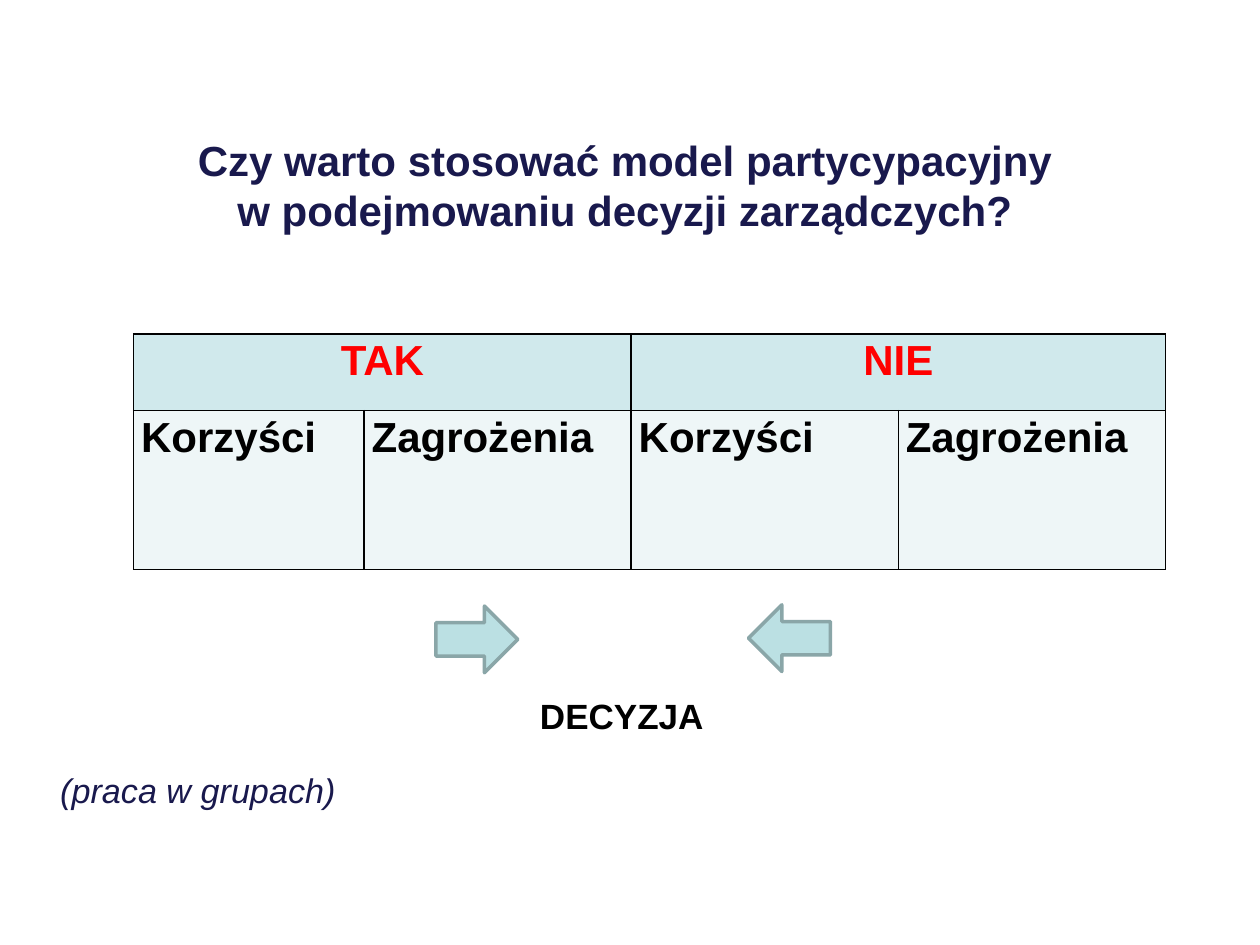
from lxml import etree
from pptx import Presentation, util as u
from pptx.dml.color import RGBColor
from pptx.enum import shapes, text
from pptx.oxml.ns import qn

NAVY = RGBColor(0x19, 0x19, 0x4D)
BLACK = RGBColor(0x00, 0x00, 0x00)
RED = RGBColor(0xFF, 0x00, 0x00)
TEAL = RGBColor(0xBB, 0xE0, 0xE3)
PALE_TEAL = RGBColor(0xE7, 0xF3, 0xF4)
ARROW_LINE = RGBColor(0x8A, 0xA6, 0xA8)


class SlideBuilder:
    """Holds the shared style and the slide being filled."""

    font_name = "Arial"
    cell_opacity = 68
    border_width = 1

    def __init__(self, slide):
        self.slide = slide

    def add_lines(self, paragraph, lines, size, color, bold=False, italic=False,
                  align=text.PP_ALIGN.CENTER):
        paragraph.alignment = align
        for index, line in enumerate(lines):
            if index:
                paragraph.add_line_break()
            run = paragraph.add_run()
            run.text = line
            run.font.name = self.font_name
            run.font.size = u.Pt(size)
            run.font.bold = bold
            run.font.italic = italic
            run.font.color.rgb = color

    def text_box(self, box, lines, size, color, anchor=text.MSO_ANCHOR.MIDDLE, **style):
        shape = self.slide.shapes.add_textbox(*map(u.Inches, box))
        frame = shape.text_frame
        frame.word_wrap = True
        frame.vertical_anchor = anchor
        self.add_lines(frame.paragraphs[0], lines, size, color, **style)

    def arrow(self, left, top, rotation=0):
        shape = self.slide.shapes.add_shape(
            shapes.MSO_SHAPE.RIGHT_ARROW,
            u.Inches(left), u.Inches(top), u.Inches(0.65), u.Inches(0.53))
        shape.rotation = rotation
        shape.shadow.inherit = False
        shape.fill.solid()
        shape.fill.fore_color.rgb = TEAL
        shape.line.color.rgb = ARROW_LINE
        shape.line.width = u.Pt(2)

    def table(self, left, top, widths, heights):
        frame = self.slide.shapes.add_table(
            len(heights), len(widths), u.Inches(left), u.Inches(top),
            u.Inches(sum(widths)), u.Inches(sum(heights)))
        table = frame.table
        for column, width in zip(table.columns, widths):
            column.width = u.Inches(width)
        for row, height in zip(table.rows, heights):
            row.height = u.Inches(height)
        return table

    def cell_style(self, cell, color):
        cell.margin_left = cell.margin_right = u.Inches(0.06)
        cell.margin_top = cell.margin_bottom = u.Inches(0.03)
        properties = cell._tc.get_or_add_tcPr()
        # Borders come before the fill in the cell properties
        for side in ("lnL", "lnR", "lnT", "lnB"):
            line = etree.SubElement(properties, qn(f"a:{side}"),
                                    w=str(u.Pt(self.border_width)))
            solid = etree.SubElement(line, qn("a:solidFill"))
            etree.SubElement(solid, qn("a:srgbClr"), val=str(BLACK))
        cell.fill.solid()
        cell.fill.fore_color.rgb = color
        fill_color = properties.find(qn("a:solidFill")).find(qn("a:srgbClr"))
        etree.SubElement(fill_color, qn("a:alpha"), val=str(self.cell_opacity * 1000))


def main():
    presentation = Presentation()
    presentation.slide_width = u.Inches(10)
    presentation.slide_height = u.Inches(7.5)
    builder = SlideBuilder(presentation.slides.add_slide(presentation.slide_layouts[6]))

    # Title
    builder.text_box((0.43, 0.68, 9.06, 1.57),
                     ["Czy warto stosować model partycypacyjny",
                      "w podejmowaniu decyzji zarządczych?"],
                     24, NAVY, bold=True)

    # Table: each answer spans its benefits and its threats
    table = builder.table(1.06, 2.65, [1.83, 2.12, 2.12, 2.12], [0.61, 1.26])
    for row, color in enumerate((TEAL, PALE_TEAL)):
        for column in range(4):
            builder.cell_style(table.cell(row, column), color)
    for group, answer in enumerate(("TAK", "NIE")):
        first = 2 * group
        header = table.cell(0, first)
        header.merge(table.cell(0, first + 1))
        builder.add_lines(header.text_frame.paragraphs[0], [answer], 24, RED, bold=True)
        for offset, label in enumerate(("Korzyści", "Zagrożenia")):
            cell = table.cell(1, first + offset)
            builder.add_lines(cell.text_frame.paragraphs[0], [label], 24, BLACK,
                              bold=True, align=text.PP_ALIGN.LEFT)

    # Arrows leading to the decision
    builder.arrow(3.46, 4.81)
    builder.arrow(5.94, 4.8, rotation=180)
    builder.text_box((4.11, 5.46, 1.65, 0.44), ["DECYZJA"], 20, BLACK,
                     anchor=text.MSO_ANCHOR.TOP, bold=True)

    # Group work note
    builder.text_box((0, 5.89, 3.22, 0.75), ["(praca w grupach) "], 19.5, NAVY, italic=True)

    presentation.save("out.pptx")


if __name__ == "__main__":
    main()
